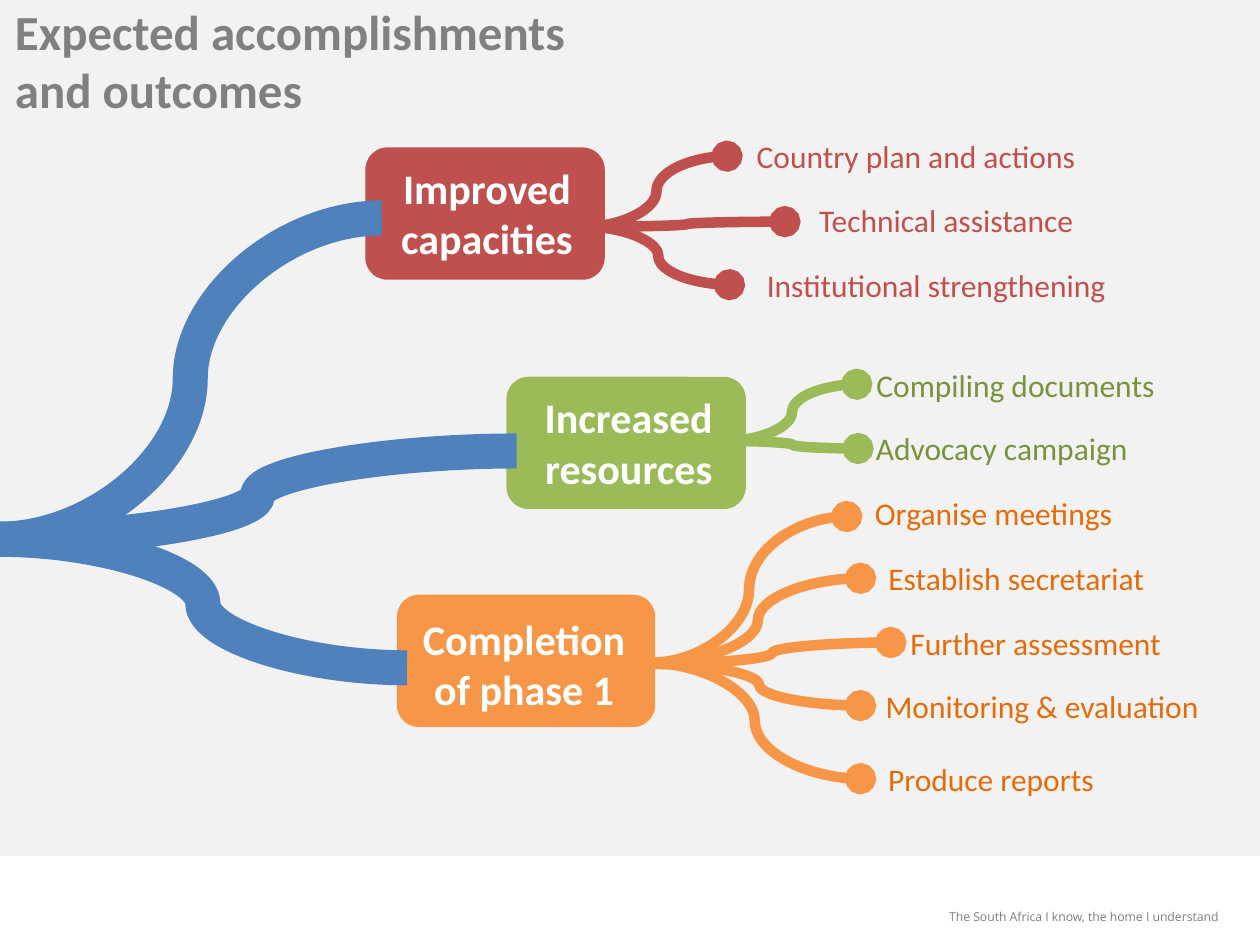
import pptx
import pptx.util
import lxml.etree
from dataclasses import dataclass
from pptx.dml.color import RGBColor
from pptx.enum.shapes import MSO_CONNECTOR, MSO_SHAPE
from pptx.enum.text import MSO_ANCHOR, MSO_AUTO_SIZE, PP_ALIGN
from pptx.oxml.ns import qn

COLUMNS, ROWS = 10, 7.5


@dataclass(frozen=True)
class Theme:
    background: str = "F2F2F2"
    white: str = "FFFFFF"
    title: str = "808080"
    footer: str = "7F7F7F"
    trunk: str = "4F81BD"
    red: str = "C0504D"
    green: str = "9BBB59"
    dark_green: str = "77933C"
    orange: str = "F79646"
    dark_orange: str = "E46C0A"
    font: str = "Calibri"
    footer_font: str = "Open Sans"
    title_size: float = 28
    heading_size: float = 24
    label_size: float = 18
    footer_size: float = 7
    trunk_width: float = 20
    twig_width: float = 6


THEME = Theme()


def write_text(frame, text, *, size, color, font=THEME.font, bold=False,
               align=PP_ALIGN.LEFT, wrap=True, grow=True):
    frame.word_wrap = wrap
    frame.auto_size = MSO_AUTO_SIZE.SHAPE_TO_FIT_TEXT if grow else MSO_AUTO_SIZE.NONE
    frame.vertical_anchor = MSO_ANCHOR.TOP
    paragraph = frame.paragraphs[0]
    paragraph.alignment = align
    run = paragraph.add_run()
    run.text = text
    run.font.name = font
    run.font.size = pptx.util.Pt(size)
    run.font.bold = bold
    run.font.color.rgb = RGBColor.from_string(color)


class MindMap:
    """Draws on one slide, with lengths in columns and rows."""

    def __init__(self, presentation, theme):
        self.theme = theme
        self.column = presentation.slide_width / COLUMNS
        self.row = presentation.slide_height / ROWS
        self.slide = presentation.slides.add_slide(presentation.slide_layouts[6])
        fill = self.slide.background.fill
        fill.solid()
        fill.fore_color.rgb = RGBColor.from_string(theme.background)

    def place(self, *lengths):
        """Turn alternating columns and rows into slide units."""
        units = (self.column, self.row) * 2
        return [round(length * unit) for length, unit in zip(lengths, units)]

    def box(self, at, color, kind=MSO_SHAPE.ROUNDED_RECTANGLE):
        shape = self.slide.shapes.add_shape(kind, *self.place(*at))
        shape.shadow.inherit = False
        shape.fill.solid()
        shape.fill.fore_color.rgb = RGBColor.from_string(color)
        shape.line.fill.background()

    def text(self, at, text, **style):
        shape = self.slide.shapes.add_textbox(*self.place(*at))
        write_text(shape.text_frame, text, **style)

    def curve(self, start, end, color, width, dot=False):
        connector = self.slide.shapes.add_connector(
            MSO_CONNECTOR.CURVE, *self.place(*start, *end))
        connector.line.color.rgb = RGBColor.from_string(color)
        connector.line.width = pptx.util.Pt(width)
        if dot:
            line = connector.line._get_or_add_ln()
            lxml.etree.SubElement(line, qn("a:tailEnd"), type="oval")
        lxml.etree.SubElement(connector._element.spPr, qn("a:effectLst"))

    def branch(self, branch):
        theme = self.theme
        self.box(branch.box, branch.color)
        self.curve(ROOT, branch.trunk_end, theme.trunk, theme.trunk_width)
        left, top, width = branch.heading_at
        self.text((left, top, width, 0.91), branch.heading, size=theme.heading_size,
                  color=theme.white, bold=True, align=PP_ALIGN.CENTER)
        for start, end, label, (left, top, width), align in branch.twigs:
            self.curve(start, end, branch.color, theme.twig_width, dot=True)
            self.text((left, top, width, 0.4), label, size=theme.label_size,
                      color=branch.label_color, align=align,
                      wrap=align == PP_ALIGN.LEFT)


@dataclass
class Branch:
    heading: str
    color: str
    label_color: str
    box: tuple         # left, top, width, height
    heading_at: tuple  # left, top, width
    trunk_end: tuple
    twigs: list        # start, end, label, label place, alignment


ROOT = (-0.01, 4.28)
CENTER, LEFT = PP_ALIGN.CENTER, PP_ALIGN.LEFT

BRANCHES = [
    Branch("Completion of phase 1", THEME.orange, THEME.dark_orange,
           (3.15, 4.72, 2.05, 1.05), (3.09, 4.82, 2.14), (3.23, 5.3), [
               ((5.17, 5.26), (6.72, 4.1), "Organise meetings", (6.83, 3.87, 2.11), CENTER),
               ((5.2, 5.26), (6.83, 4.59), "Establish secretariat", (6.94, 4.39, 2.25), CENTER),
               ((5.18, 5.27), (7.07, 5.1), "Further assessment", (6.94, 4.9, 2.56), CENTER),
               ((5.22, 5.27), (6.83, 5.6), "Monitoring & evaluation", (6.93, 5.4, 2.96), LEFT),
               ((5.15, 5.26), (6.83, 6.18), "Produce reports", (6.95, 5.98, 2.96), LEFT),
           ]),
    Branch("Increased resources", THEME.green, THEME.dark_green,
           (4.02, 2.99, 1.9, 1.05), (3.75, 3.06, 2.48), (4.1, 3.58), [
               ((5.77, 3.5), (6.8, 3.05), "Compiling documents", (6.84, 2.86, 2.44), CENTER),
               ((5.77, 3.5), (6.81, 3.56), "Advocacy campaign", (6.84, 3.36, 2.22), CENTER),
           ]),
    Branch("Improved capacities", THEME.red, THEME.red,
           (2.9, 1.17, 1.9, 1.05), (2.5, 1.24, 2.73), (3.03, 1.73), [
               ((4.65, 1.8), (5.77, 1.24), "Country plan and actions", (5.89, 1.04, 2.76), CENTER),
               ((4.67, 1.8), (6.23, 1.76), "Technical assistance", (6.39, 1.55, 2.24), CENTER),
               ((4.66, 1.8), (5.79, 2.26), "Institutional strengthening", (5.97, 2.06, 2.92), CENTER),
           ]),
]


def main():
    presentation = pptx.Presentation()
    presentation.slide_width = pptx.util.Inches(10)
    presentation.slide_height = pptx.util.Inches(7.5)
    mind_map = MindMap(presentation, THEME)

    # Footer band
    mind_map.box((0, 6.79, COLUMNS, ROWS - 6.79), THEME.white, MSO_SHAPE.RECTANGLE)
    mind_map.text((6.63, 7.17, 3.14, 0.22), "The South Africa I know, the home I understand",
                  size=THEME.footer_size, color=THEME.footer, font=THEME.footer_font,
                  align=PP_ALIGN.RIGHT)

    # Branches with their twigs
    for branch in BRANCHES:
        mind_map.branch(branch)

    # Title
    mind_map.text((0.02, -0.04, 4.95, 1.09), "Expected accomplishments and outcomes",
                  size=THEME.title_size, color=THEME.title, bold=True, grow=False)

    presentation.save("out.pptx")


if __name__ == "__main__":
    main()
